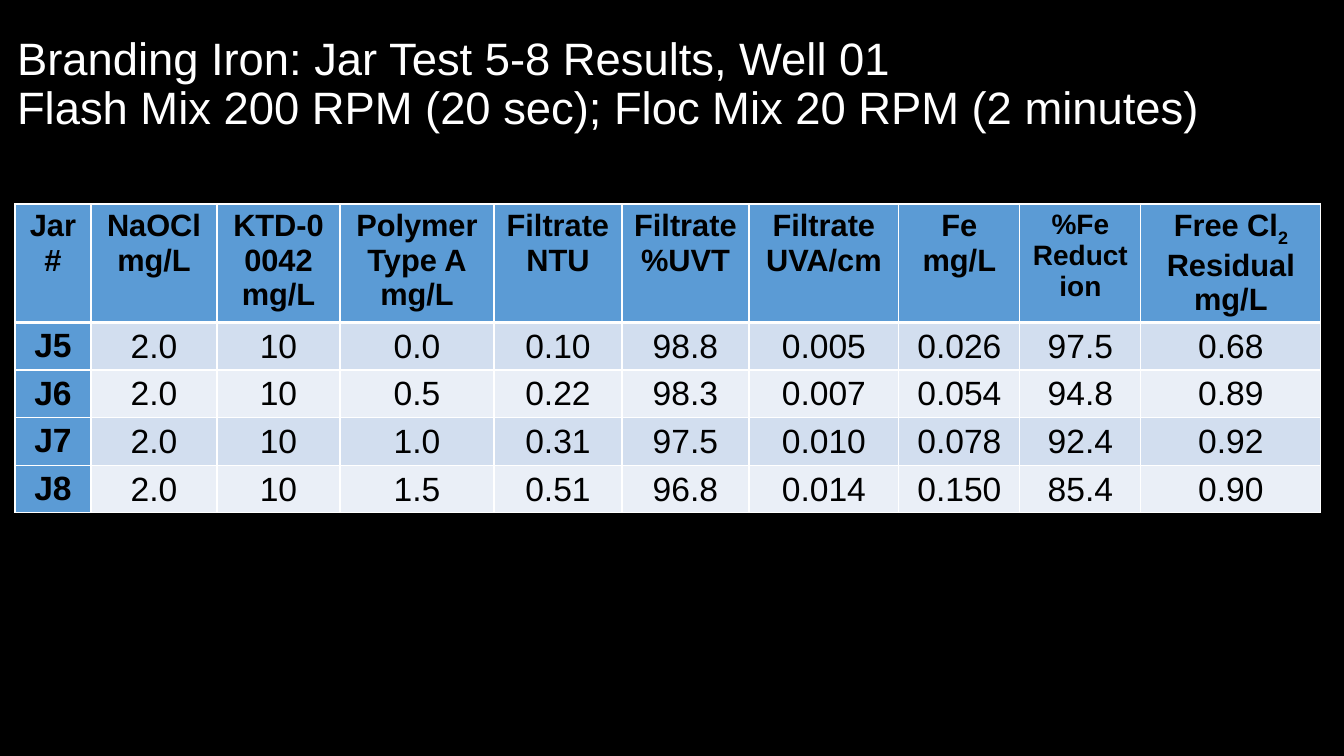
from dataclasses import dataclass

from lxml.etree import SubElement
from pptx import Presentation
from pptx.dml.color import RGBColor
from pptx.enum.text import MSO_ANCHOR, MSO_AUTO_SIZE, PP_ALIGN
from pptx.oxml.ns import qn
from pptx.util import Pt

EMU_PER_PX = 914400 / 100.8
FONT = "Arial"
BLACK, WHITE, BLUE = "000000", "FFFFFF", "5B9BD5"
BANDS = ("D2DEEF", "EAEFF7")
HEADER_HEIGHT, ROW_HEIGHT = 105, 44


@dataclass
class Column:
    width: int
    heading: str
    size: int = 22
    subscript: str = ""  # follows the first line of the heading


COLUMNS = [
    Column(76, "Jar\n#"),
    Column(126, "NaOCl\nmg/L"),
    Column(123, "KTD-00042\nmg/L"),
    Column(154, "Polymer\nType A\nmg/L"),
    Column(128, "Filtrate\nNTU"),
    Column(127, "Filtrate\n%UVT"),
    Column(150, "Filtrate\nUVA/cm"),
    Column(121, "Fe\nmg/L"),
    Column(121, "%Fe\nReduction", size=20),
    Column(180, "Free Cl\nResidual\nmg/L", subscript="2"),
]
RESULTS = [
    ("J5", "2.0", "10", "0.0", "0.10", "98.8", "0.005", "0.026", "97.5", "0.68"),
    ("J6", "2.0", "10", "0.5", "0.22", "98.3", "0.007", "0.054", "94.8", "0.89"),
    ("J7", "2.0", "10", "1.0", "0.31", "97.5", "0.010", "0.078", "92.4", "0.92"),
    ("J8", "2.0", "10", "1.5", "0.51", "96.8", "0.014", "0.150", "85.4", "0.90"),
]


def px(length: int) -> int:
    return round(length * EMU_PER_PX)


def colour(value: str) -> RGBColor:
    return RGBColor.from_string(value)


def format_text(frame, size: float, ink: str, align, bold: bool = False) -> None:
    for para in frame.paragraphs:
        para.alignment = align
        for span in para.runs:
            span.font.name = FONT
            span.font.size = Pt(size)
            span.font.bold = bold
            span.font.color.rgb = colour(ink)


def set_borders(cell, top: int, bottom: int) -> None:
    properties = cell._tc.get_or_add_tcPr()
    sides = (("L", 1), ("R", 1), ("T", top), ("B", bottom))
    for index, (side, points) in enumerate(sides):
        line = SubElement(properties, qn(f"a:ln{side}"), w=str(Pt(points)))
        fill = SubElement(line, qn("a:solidFill"))
        SubElement(fill, qn("a:srgbClr"), val=WHITE)
        properties.insert(index, line)  # borders come before the cell fill


def fill_cell(cell, text: str, size: int, fill: str, bold: bool, subscript: str = "") -> None:
    cell.text_frame.text = text
    if subscript:
        span = cell.text_frame.paragraphs[0].add_run()
        span.text = subscript
        span._r.get_or_add_rPr().set("baseline", "-25000")
    format_text(cell.text_frame, size, BLACK, PP_ALIGN.CENTER, bold)
    cell.fill.solid()
    cell.fill.fore_color.rgb = colour(fill)


def add_title(page) -> None:
    title = page.shapes.title
    title.left, title.top, title.width, title.height = px(7), px(12), px(1313), px(146)
    frame = title.text_frame
    frame.text = (
        "Branding Iron: Jar Test 5-8 Results, Well 01\v"
        "Flash Mix 200 RPM (20 sec); Floc Mix 20 RPM (2 minutes)"
    )
    frame.word_wrap = True
    frame.auto_size = MSO_AUTO_SIZE.NONE
    frame.vertical_anchor = MSO_ANCHOR.MIDDLE
    format_text(frame, 32.4, WHITE, PP_ALIGN.LEFT)
    para = frame.paragraphs[0]
    para.line_spacing = 0.9
    for line_break in para._p.findall(qn("a:br")):
        SubElement(line_break, qn("a:rPr"), sz="3240")


def add_results(page) -> None:
    width = sum(column.width for column in COLUMNS)
    height = HEADER_HEIGHT + ROW_HEIGHT * len(RESULTS)
    table = page.shapes.add_table(
        len(RESULTS) + 1, len(COLUMNS), px(15), px(204), px(width), px(height)
    ).table
    table.first_col = True

    # Header row
    table.rows[0].height = px(HEADER_HEIGHT)
    for index, column in enumerate(COLUMNS):
        table.columns[index].width = px(column.width)
        cell = table.cell(0, index)
        fill_cell(cell, column.heading, column.size, BLUE, True, column.subscript)
        set_borders(cell, top=1, bottom=3)

    # One row per jar
    for row, values in enumerate(RESULTS, start=1):
        table.rows[row].height = px(ROW_HEIGHT)
        for index, value in enumerate(values):
            cell = table.cell(row, index)
            is_jar = index == 0
            fill_cell(cell, value, 24, BLUE if is_jar else BANDS[(row - 1) % 2], is_jar)
            if not is_jar:
                cell.vertical_anchor = MSO_ANCHOR.MIDDLE
                cell.margin_left = cell.margin_right = cell.margin_top = px(1)
                cell.margin_bottom = 0
            set_borders(cell, top=3 if row == 1 else 1, bottom=1)


def main() -> None:
    deck = Presentation()
    deck.slide_width, deck.slide_height = px(1344), px(756)
    page = deck.slides.add_slide(deck.slide_layouts[5])
    page.background.fill.solid()
    page.background.fill.fore_color.rgb = colour(BLACK)
    add_title(page)
    add_results(page)
    deck.save("out.pptx")


if __name__ == "__main__":
    main()
